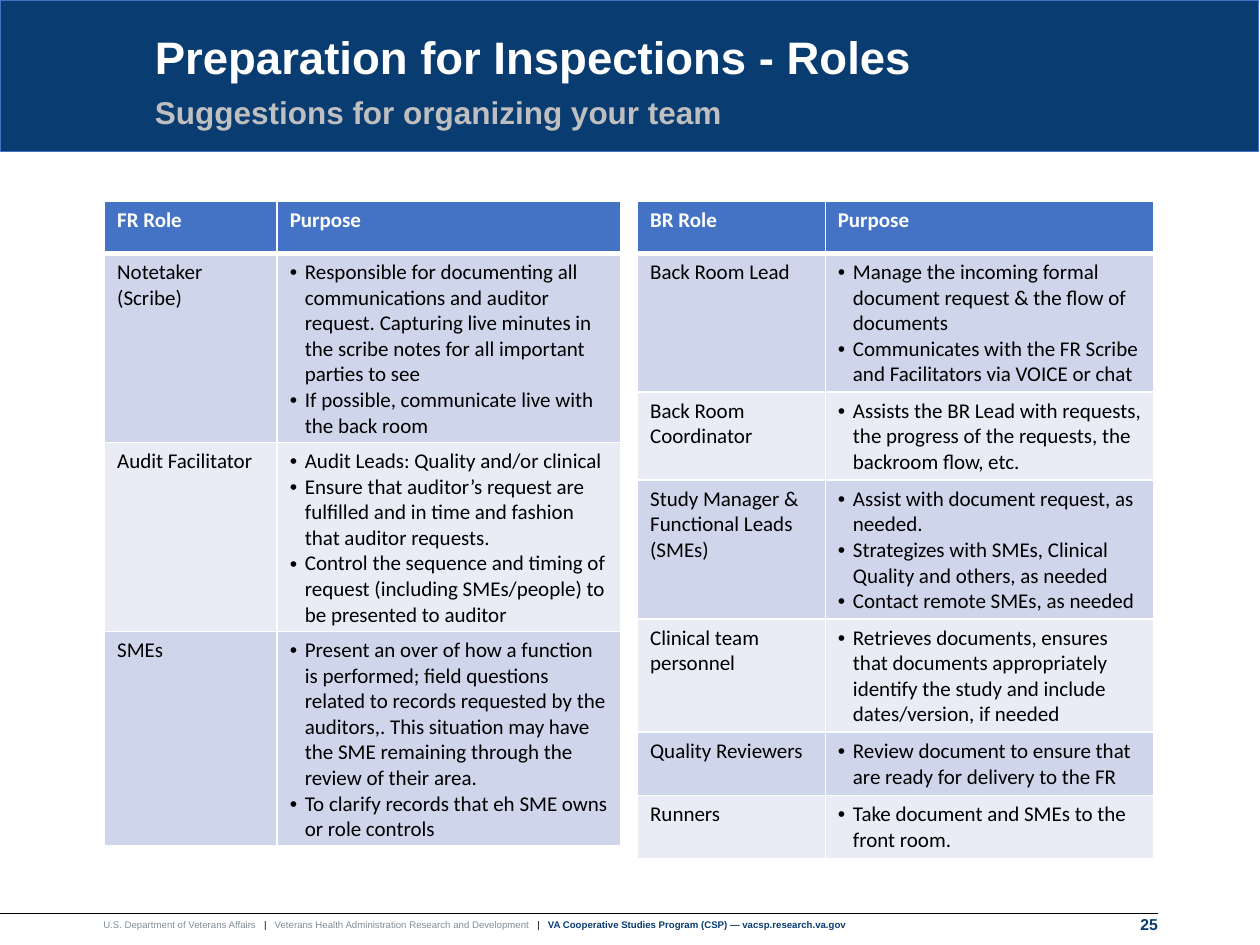
import pptx
import pptx.dml.color
import pptx.enum.shapes
import pptx.enum.text
import pptx.oxml
import pptx.oxml.ns
import pptx.util
from lxml import etree

Inches = pptx.util.Inches
Pt = pptx.util.Pt
qn = pptx.oxml.ns.qn
ALIGN = pptx.enum.text.PP_ALIGN
ANCHOR = pptx.enum.text.MSO_ANCHOR

NAVY, BLUE, WHITE, BLACK = "093C71", "4472C4", "FFFFFF", "000000"
SILVER, GREY = "BFBFBF", "828E96"
BANDS = ("CFD5EA", "E9EBF5")
ROW_HEIGHT = 0.41


def color(value):
    return pptx.dml.color.RGBColor.from_string(value)


class Deck:
    def __init__(self, width, height):
        self.presentation = pptx.Presentation()
        self.presentation.slide_width = Inches(width)
        self.presentation.slide_height = Inches(height)
        self.slide = self.presentation.slides.add_slide(self.presentation.slide_layouts[6])

    def style(self, font, size, tint, bold=False, name="Arial"):
        formats = {"name": name, "size": Pt(size), "bold": bold}
        for key, value in formats.items():
            setattr(font, key, value)
        font.color.rgb = color(tint)

    def banner(self, box):
        band = self.slide.shapes.add_shape(
            pptx.enum.shapes.MSO_SHAPE.RECTANGLE, *map(Inches, box))
        band.shadow.inherit = False
        band.fill.solid()
        band.fill.fore_color.rgb = color(NAVY)
        band.line.color.rgb = color(BLUE)
        band.line.width = Pt(0.5)

    def text(self, box, runs, size, anchor=ANCHOR.TOP, **paragraph_formats):
        frame = self.slide.shapes.add_textbox(*map(Inches, box)).text_frame
        frame_formats = {"word_wrap": True, "vertical_anchor": anchor, "margin_left": 0,
                         "margin_top": 0, "margin_right": 0, "margin_bottom": 0}
        for key, value in frame_formats.items():
            setattr(frame, key, value)
        paragraph = frame.paragraphs[0]
        for key, value in paragraph_formats.items():
            setattr(paragraph, key, value)
        for words, tint, bold in runs:
            run = paragraph.add_run()
            run.text = words
            self.style(run.font, size, tint, bold)

    def rule(self, start, end):
        line = self.slide.shapes.add_connector(
            pptx.enum.shapes.MSO_CONNECTOR.STRAIGHT, *map(Inches, start + end))
        line.line.color.rgb = color(BLACK)
        line.line.width = Pt(0.75)
        etree.SubElement(line._element.spPr, qn("a:effectLst"))

    def cell(self, cell, lines, fill, tint, bold, bulleted, borders):
        properties = cell._tc.get_or_add_tcPr()
        for side, width in borders.items():
            border = etree.SubElement(properties, qn("a:ln" + side), w=str(Pt(width)))
            solid = etree.SubElement(border, qn("a:solidFill"))
            etree.SubElement(solid, qn("a:srgbClr"), val=WHITE)
        cell.fill.solid()
        cell.fill.fore_color.rgb = color(fill)
        cell.text_frame.text = "\n".join(lines)
        for paragraph in cell.text_frame.paragraphs:
            if bulleted:
                layout = paragraph._p.get_or_add_pPr()
                layout.set("marL", str(Inches(0.12)))
                layout.set("indent", str(Inches(-0.12)))
                etree.SubElement(layout, qn("a:buFont"), typeface="Arial")
                etree.SubElement(layout, qn("a:buChar"), char="•")
            self.style(paragraph.runs[0].font, 12, tint, bold, "Calibri")

    def table(self, box, widths, role_heading, roles):
        rows = [(role_heading, ["Purpose"])] + roles
        frame = self.slide.shapes.add_table(len(rows), 2, *map(Inches, box))
        grid = frame.table
        grid.first_row = grid.horz_banding = False
        for column, width in zip(grid.columns, widths):
            column.width = Inches(width)
        for index, (role, purposes) in enumerate(rows):
            grid.rows[index].height = Inches(ROW_HEIGHT)
            heading = index == 0
            fill = BLUE if heading else BANDS[(index - 1) % 2]
            tint = WHITE if heading else BLACK
            borders = {"L": 1, "R": 1, "T": 3 if index == 1 else 1, "B": 3 if heading else 1}
            for position, lines in enumerate(([role], purposes)):
                self.cell(grid.cell(index, position), lines, fill, tint, heading,
                          position == 1 and not heading, borders)
        frame.height = Inches(box[3])


FRONT_ROOM = [
    ("Notetaker (Scribe)", [
        "Responsible for documenting all communications and auditor request. "
        "Capturing live minutes in the scribe notes for all important parties to see",
        "If possible, communicate live with the back room"]),
    ("Audit Facilitator", [
        "Audit Leads: Quality and/or clinical",
        "Ensure that auditor’s request are fulfilled and in time and fashion "
        "that auditor requests.",
        "Control the sequence and timing of request (including SMEs/people) "
        "to be presented to auditor"]),
    ("SMEs", [
        "Present an over of how a function is performed; field questions related to "
        "records requested by the auditors,. This situation may have the SME remaining "
        "through the review of their area.",
        "To clarify records that eh SME owns or role controls"]),
]
BACK_ROOM = [
    ("Back Room Lead", [
        "Manage the incoming formal document request & the flow of documents",
        "Communicates with the FR Scribe and Facilitators via VOICE or chat"]),
    ("Back Room Coordinator", [
        "Assists the BR Lead with requests, the progress of the requests, "
        "the backroom flow, etc."]),
    ("Study Manager & Functional Leads (SMEs)", [
        "Assist with document request, as needed.",
        "Strategizes with SMEs, Clinical Quality and others, as needed",
        "Contact remote SMEs, as needed"]),
    ("Clinical team personnel", [
        "Retrieves documents, ensures that documents appropriately identify the study "
        "and include dates/version, if needed"]),
    ("Quality Reviewers", ["Review document to ensure that are ready for delivery to the FR"]),
    ("Runners", ["Take document and SMEs to the front room."]),
]
FOOTER = [
    ("U.S. Department of Veterans Affairs   ", GREY, False),
    ("|", BLACK, False),
    ("   Veterans Health Administration Research and Development   ", GREY, False),
    ("|   ", BLACK, False),
    ("VA Cooperative Studies Program (CSP) — vacsp.research.va.gov", NAVY, True),
]


def main():
    deck = Deck(10, 7.5)
    deck.banner((0, 0, 9.99, 1.2))
    deck.text((8.73, 7.26, 0.46, 0.2), [("25", NAVY, True)], 9, alignment=ALIGN.RIGHT)
    deck.rule((0, 7.25), (9.19, 7.25))
    deck.text((0.82, 7.29, 6.04, 0.19), FOOTER, 5.5)
    deck.table((0.83, 1.6, 4.1, 5.11), (1.37, 2.73), "FR Role", FRONT_ROOM)
    deck.table((5.06, 1.6, 4.1, 5.21), (1.49, 2.61), "BR Role", BACK_ROOM)
    deck.text((1.23, 0, 8.77, 0.67), [("Preparation for Inspections - Roles", WHITE, True)],
              26, ANCHOR.BOTTOM, line_spacing=0.9)
    deck.text((1.23, 0.77, 7.88, 0.47), [("Suggestions for organizing your team", SILVER, True)],
              18, line_spacing=0.9, space_after=Pt(12))
    deck.presentation.save("out.pptx")


if __name__ == "__main__":
    main()
